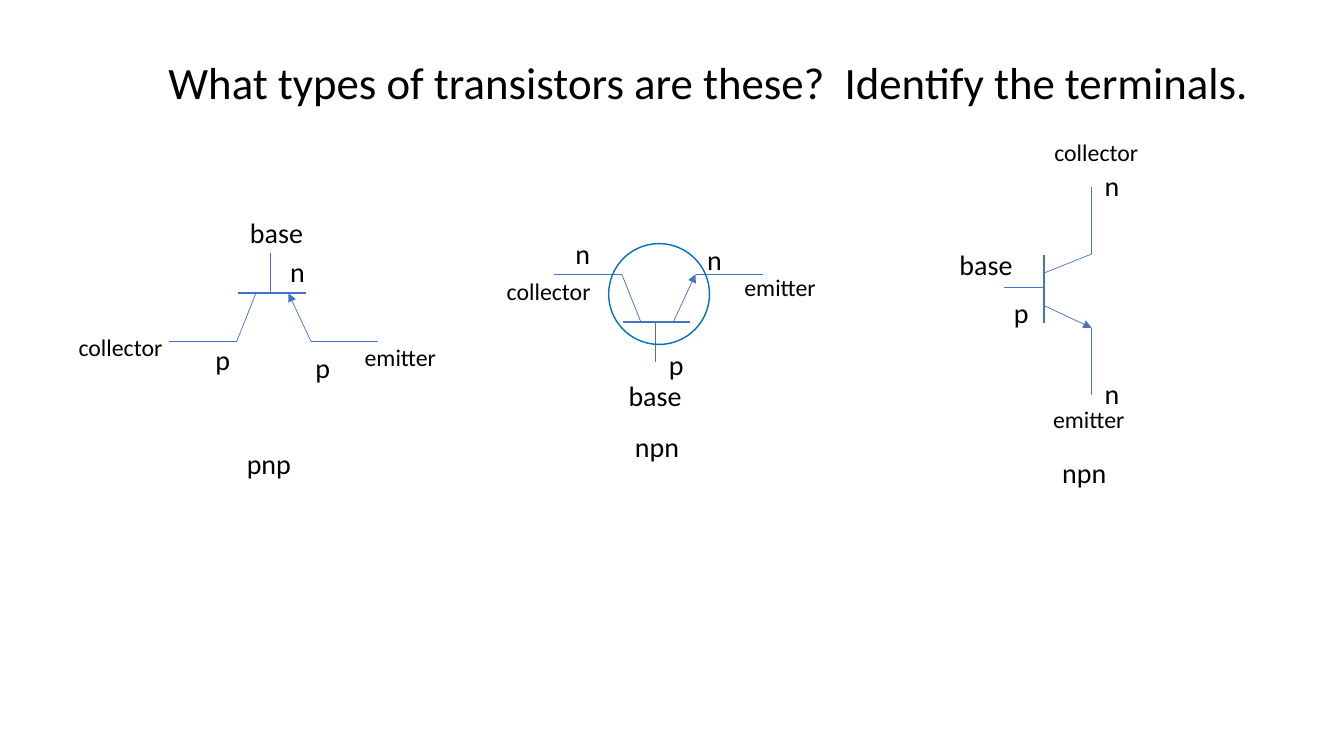
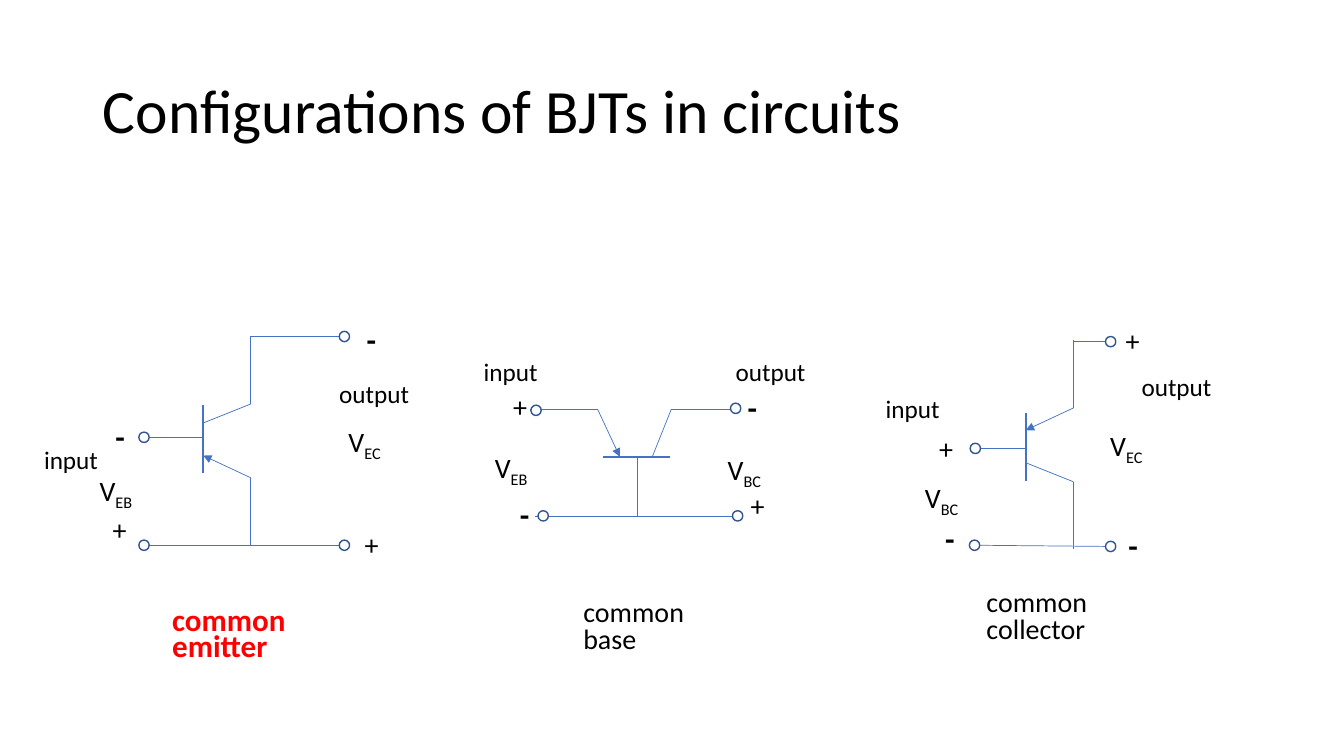
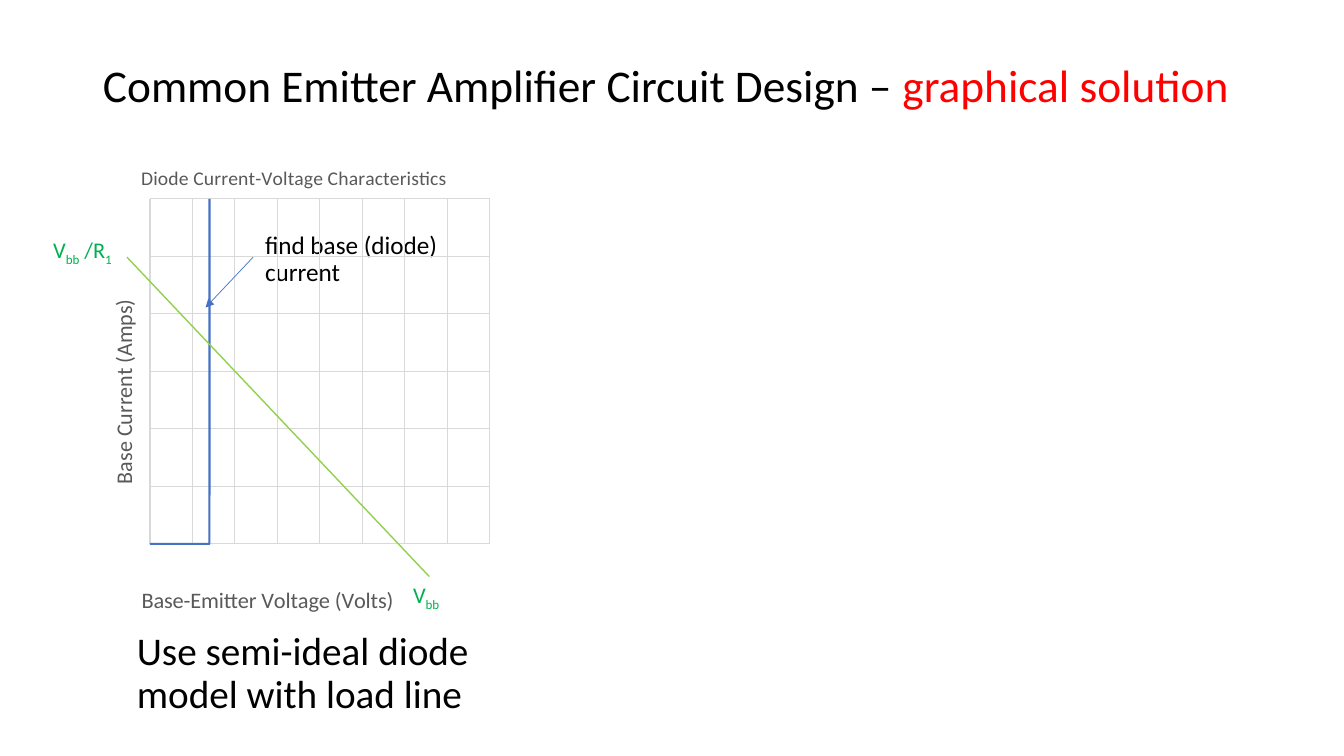
import pptx
import pptx.chart.data
import pptx.dml.color
import pptx.enum.chart
import pptx.enum.shapes
import pptx.enum.text
import pptx.oxml.ns
import pptx.oxml.xmlchemy
import pptx.util

Cm = pptx.util.Cm
Pt = pptx.util.Pt
FONT = "Calibri"
COLORS = {
    "ink": "000000",
    "paper": "FFFFFF",
    "wire": "4472C4",
    "terminal": "325491",
    "circle": "0070C0",
    "accent": "FF0000",
    "load_line": "92D050",
    "load_text": "00B050",
    "grid": "D9D9D9",
    "chart_text": "595959",
}

STYLES = {
    "region": dict(width=1.55, height=1.12, size=20, spacing=0.9),
    "base": dict(width=2.03, height=1.42, size=20, spacing=0.9),
    "type": dict(width=2.39, height=1.42, size=20, spacing=0.9),
    "lead": dict(width=2.69, height=1.42, size=17, spacing=0.8),
    "voltage": dict(width=1.55, height=1.12, size=20, spacing=0.9),
    "plus": dict(width=0.91, height=0.99, size=20, spacing=0.8),
    "minus": dict(width=0.91, height=0.99, size=22.2, spacing=0.7, bold=True),
    "port": dict(width=2.29, height=0.99, size=18, spacing=0.9),
    "caption": dict(width=3.12, height=1.75, size=20, spacing=0.8),
    "key_caption": dict(width=4.22, height=1.75, size=22.2, spacing=0.7,
                        bold=True, color="accent"),
    "note": dict(width=5.38, height=1.88, size=18, spacing=0.9),
    "summary": dict(width=9.35, height=2.77, size=28, spacing=0.9),
    "intercept": dict(width=2.34, height=1.37, size=16, spacing=0.9, color="load_text"),
    "short_intercept": dict(width=1.35, height=1.37, size=16, spacing=0.9,
                            color="load_text"),
}

DIRECTIONS = {
    "right": (1, 0),
    "left": (-1, 0),
    "down": (0, 1),
    "up": (0, -1),
}


def rgb(name):
    return pptx.dml.color.RGBColor.from_string(COLORS[name])


def new_element(name):
    return pptx.oxml.xmlchemy.OxmlElement(name)


def format_font(font, size, color="ink", bold=False):
    for name, value in dict(name=FONT, size=Pt(size), bold=bold).items():
        setattr(font, name, value)
    font.color.rgb = rgb(color)


def place(item, left, top, width, height):
    values = dict(left=left, top=top, width=width, height=height)
    for name, value in values.items():
        setattr(item, name, Cm(value))


def add_title(page, box, size, parts):
    title = page.shapes.title
    place(title, *box)
    frame = title.text_frame
    settings = dict(
        word_wrap=True,
        auto_size=pptx.enum.text.MSO_AUTO_SIZE.NONE,
        vertical_anchor=pptx.enum.text.MSO_ANCHOR.MIDDLE,
    )
    for name, value in settings.items():
        setattr(frame, name, value)
    para = frame.paragraphs[0]
    para.alignment = pptx.enum.text.PP_ALIGN.LEFT
    para.line_spacing = 0.9
    for text, color in parts:
        span = para.add_run()
        span.text = text
        format_font(span.font, size, color)


def add_label(page, style, text, left, top):
    values = STYLES[style]
    box = page.shapes.add_textbox(
        Cm(left), Cm(top), Cm(values["width"]), Cm(values["height"]))
    box.text_frame.word_wrap = True
    para = box.text_frame.paragraphs[0]
    para.line_spacing = values["spacing"]
    para.space_before = Pt(10)
    for index, part in enumerate(text.split("_")):
        span = para.add_run()
        span.text = part
        format_font(span.font, values["size"], values.get("color", "ink"),
                    values.get("bold", False))
        if index % 2:
            span.font._element.set("baseline", "-25000")


def add_line(page, start, end, width=0.5, color="wire", arrow=False):
    line = page.shapes.add_connector(
        pptx.enum.shapes.MSO_CONNECTOR.STRAIGHT,
        *(Cm(value) for value in (*start, *end)))
    line.line.color.rgb = rgb(color)
    line.line.width = Pt(width)
    properties = line._element.spPr
    if arrow:
        outline = properties.find(pptx.oxml.ns.qn("a:ln"))
        head = new_element("a:tailEnd")
        head.set("type", "triangle")
        outline.append(head)
    properties.append(new_element("a:effectLst"))


def add_circle(page, left, top, size, color, fill=None):
    circle = page.shapes.add_shape(
        pptx.enum.shapes.MSO_SHAPE.OVAL, Cm(left), Cm(top), Cm(size), Cm(size))
    circle.shadow.inherit = False
    circle.line.color.rgb = rgb(color)
    circle.line.width = Pt(1)
    if fill:
        circle.fill.solid()
        circle.fill.fore_color.rgb = rgb(fill)
    else:
        circle.fill.background()


def add_transistor(page, left, top, along, toward_base, kind, base_length=1.02):
    along_x, along_y = DIRECTIONS[along]
    base_x, base_y = DIRECTIONS[toward_base]

    def point(distance, depth):
        return (left + distance * along_x + depth * base_x,
                top + distance * along_y + depth * base_y)

    bar = 1.2
    emitter = [point(3.56, 0), point(3, bar)]
    if kind == "npn":
        emitter.reverse()
    add_line(page, point(0, 0), point(1.7, 0))
    add_line(page, point(3.56, 0), point(5.26, 0))
    add_line(page, point(1.73, bar), point(3.43, bar), width=1.5)
    add_line(page, point(1.7, 0), point(2.18, bar))
    add_line(page, *emitter, arrow=True)
    add_line(page, point(2.55, bar), point(2.55, bar + base_length))


def add_circuit(page, left, top, symbol, labels, wires=(), terminals=(), circle=None):
    offset_x, offset_y, *orientation = symbol
    add_transistor(page, left + offset_x, top + offset_y, *orientation)
    for x1, y1, x2, y2 in wires:
        add_line(page, (left + x1, top + y1), (left + x2, top + y2))
    for x, y in terminals:
        add_circle(page, left + x - 0.13, top + y - 0.13, 0.26, "terminal", "paper")
    if circle:
        x, y, size = circle
        add_circle(page, left + x, top + y, size, "circle")
    for style, text, x, y in labels:
        add_label(page, style, text, left + x, top + y)


IDENTIFY = [
    dict(
        left=1.73, top=5.41, symbol=(2.54, 3.18, "right", "up", "pnp"),
        labels=[
            ("region", "p", 5.97, 3.4), ("region", "p", 3.45, 3.2),
            ("region", "n", 5.33, 0.97), ("base", "base", 4.32, 0),
            ("lead", "emitter", 7.21, 3.23), ("lead", "collector", 0, 3),
            ("type", "pnp", 4.24, 5.82),
        ],
    ),
    dict(
        left=12.52, top=5.94, symbol=(1.45, 0.97, "right", "down", "npn"),
        circle=(2.82, 0.2, 2.54),
        labels=[
            ("region", "p", 4.09, 2.79), ("region", "n", 5.05, 0.13),
            ("region", "n", 1.73, 0), ("base", "base", 3.07, 3.58),
            ("lead", "emitter", 5.99, 0.94), ("lead", "collector", 0, 1.04),
            ("type", "npn", 3.23, 4.85),
        ],
    ),
    dict(
        left=23.93, top=3.48, symbol=(3.58, 1.22, "down", "left", "npn"),
        labels=[
            ("region", "p", 1.37, 3.94), ("region", "n", 3.66, 5.99),
            ("region", "n", 3.66, 0.74), ("base", "base", 0, 2.74),
            ("lead", "emitter", 2.36, 6.73), ("lead", "collector", 2.39, 0),
            ("type", "npn", 2.59, 7.98),
        ],
    ),
]

CONFIGURATIONS = [
    dict(
        left=0.86, top=8.2, symbol=(5.46, 0.28, "down", "left", "pnp", 1.5),
        wires=[(2.77, 5.54, 7.82, 5.54), (5.46, 0.28, 7.82, 0.28)],
        terminals=[(2.77, 2.82), (7.82, 0.28), (7.82, 5.54), (2.77, 5.54)],
        labels=[
            ("key_caption", "common emitter", 3.23, 7.06),
            ("voltage", "V_EB", 1.4, 3.61), ("plus", "+", 1.73, 4.75),
            ("minus", "-", 1.8, 2.44), ("voltage", "V_EC", 7.67, 2.39),
            ("plus", "+", 8.08, 5.13), ("minus", "-", 8.13, 0),
            ("port", "input", 0, 2.95), ("port", "output", 7.44, 1.3),
        ],
    ),
    dict(
        left=11.94, top=8.94, symbol=(6.68, 1.37, "left", "down", "pnp", 1.5),
        wires=[(1.55, 4.06, 6.6, 4.06)],
        terminals=[(6.65, 4.06), (1.75, 4.06), (1.57, 1.4), (6.6, 1.35)],
        labels=[
            ("caption", "common base", 2.51, 6.07),
            ("voltage", "V_EB", 0.28, 2.31), ("plus", "+", 0.74, 0.91),
            ("minus", "-", 0.91, 3.68), ("voltage", "V_BC", 6.15, 2.34),
            ("plus", "+", 6.73, 3.4), ("minus", "-", 6.65, 0.97),
            ("port", "input", 0, 0), ("port", "output", 6.35, 0),
        ],
    ),
    dict(
        left=22.07, top=8.18, symbol=(4.98, 5.66, "up", "left", "pnp", 1.2),
        wires=[(2.51, 5.56, 5.92, 5.59), (4.98, 0.43, 5.89, 0.43)],
        terminals=[(2.49, 5.56), (2.51, 3.12), (5.92, 0.43), (5.92, 5.59)],
        labels=[
            ("caption", "common collector", 2.54, 6.6),
            ("voltage", "V_BC", 0.99, 3.81), ("plus", "+", 1.35, 2.74),
            ("minus", "-", 1.5, 5.05), ("voltage", "V_EC", 5.66, 2.51),
            ("plus", "+", 6.05, 0), ("minus", "-", 6.12, 5.23),
            ("port", "input", 0, 1.7), ("port", "output", 6.45, 1.14),
        ],
    ),
]


def set_layout(element, inner=False, **fractions):
    for old in element.findall(pptx.oxml.ns.qn("c:layout")):
        element.remove(old)
    layout = new_element("c:layout")
    manual = new_element("c:manualLayout")
    layout.append(manual)
    entries = [("layoutTarget", "inner")] if inner else []
    entries += [("xMode", "edge"), ("yMode", "edge"), *fractions.items()]
    for name, value in entries:
        entry = new_element("c:" + name)
        entry.set("val", str(value))
        manual.append(entry)
    if inner:
        element.insert(0, layout)
    else:
        element.find(pptx.oxml.ns.qn("c:tx")).addnext(layout)


def format_chart_title(title, text, size, x, y):
    title.text_frame.text = text
    span = title.text_frame.paragraphs[0].runs[0]
    format_font(span.font, size, "chart_text")
    set_layout(title._element, x=x, y=y)


def format_axis(axis, maximum, step, text, x, y):
    settings = dict(minimum_scale=0, maximum_scale=maximum, major_unit=step,
                    has_major_gridlines=True, has_title=True, visible=False)
    for name, value in settings.items():
        setattr(axis, name, value)
    grid = axis.major_gridlines.format.line
    grid.color.rgb = rgb("grid")
    grid.width = Pt(0.75)
    format_chart_title(axis.axis_title, text, 16, x, y)


def add_diode_chart(page, left, top, width, height):
    data = pptx.chart.data.XyChartData()
    series = data.add_series("Series 1")
    voltages = [round(0.05 * step, 2) for step in range(-1, 15)] + [0.72, 0.74]
    currents = [0] * 16 + [10, 100]
    for voltage, current in zip(voltages, currents):
        series.add_data_point(voltage, current)
    chart = page.shapes.add_chart(
        pptx.enum.chart.XL_CHART_TYPE.XY_SCATTER_SMOOTH_NO_MARKERS,
        Cm(left), Cm(top), Cm(width), Cm(height), data).chart
    format_font(chart.font, 10)
    chart.has_legend = False
    chart.has_title = True
    format_chart_title(chart.chart_title, "Diode Current-Voltage Characteristics",
                       14, 0.13, 0.04)
    format_axis(chart.category_axis, 4, 0.5, "Base-Emitter Voltage (Volts)", 0.13, 0.93)
    format_axis(chart.value_axis, 0.6, 0.1, "Base Current (Amps)", 0.05, 0.33)
    turn = chart.value_axis.axis_title.text_frame._txBody.bodyPr
    turn.set("rot", "-5400000")
    turn.set("vert", "horz")
    plot = chart.plots[0]
    plot.vary_by_categories = False
    curve = plot.series[0]
    curve.smooth = True
    curve.marker.style = pptx.enum.chart.XL_MARKER_STYLE.NONE
    curve.format.line.color.rgb = rgb("wire")
    curve.format.line.width = Pt(1.5)
    area = chart._chartSpace.chart.plotArea
    set_layout(area, inner=True, x=0.16, y=0.12, w=0.82, h=0.73)


def add_load_line_plot(page, left, top):
    add_label(page, "note", "find base (diode) current", left + 4.32, top + 2.16)
    add_label(page, "summary", "Use semi-ideal diode model with load line",
              left + 1.09, top + 12.22)
    add_diode_chart(page, left, top, 10.44, 12.09)
    add_line(page, (left + 4.27, top + 2.9), (left + 3.07, top + 4.17), arrow=True)
    add_line(page, (left + 1.09, top + 2.9), (left + 8.71, top + 10.95),
             width=1, color="load_line")
    add_label(page, "intercept", "V_bb_ /R_1", left - 1.02, top + 2.26)
    add_label(page, "short_intercept", "V_bb", left + 8.05, top + 10.95)


def build_circuit_page(page, title_box, title_size, title, circuits):
    add_title(page, title_box, title_size, [(title, "ink")])
    for circuit in circuits:
        add_circuit(page, **circuit)


def build_design_page(page):
    add_title(page, (2.34, 1.02, 29.21, 2.41), 32.4, [
        ("Common Emitter Amplifier Circuit Design – ", "ink"),
        ("graphical solution", "accent"),
    ])
    add_load_line_plot(page, 2.11, 3.58)


def main():
    deck = pptx.Presentation()
    deck.slide_width = Cm(33.87)
    deck.slide_height = Cm(19.05)
    pages = [deck.slides.add_slide(deck.slide_layouts[5]) for number in range(3)]
    build_circuit_page(pages[0], (3.99, 0.94, 28.19, 2.41), 32,
                       "What types of transistors are these?  Identify the terminals.",
                       IDENTIFY)
    build_circuit_page(pages[1], (2.34, 1.02, 29.21, 3.68), 44,
                       "Configurations of BJTs in circuits", CONFIGURATIONS)
    build_design_page(pages[2])
    deck.save("out.pptx")


if __name__ == "__main__":
    main()
